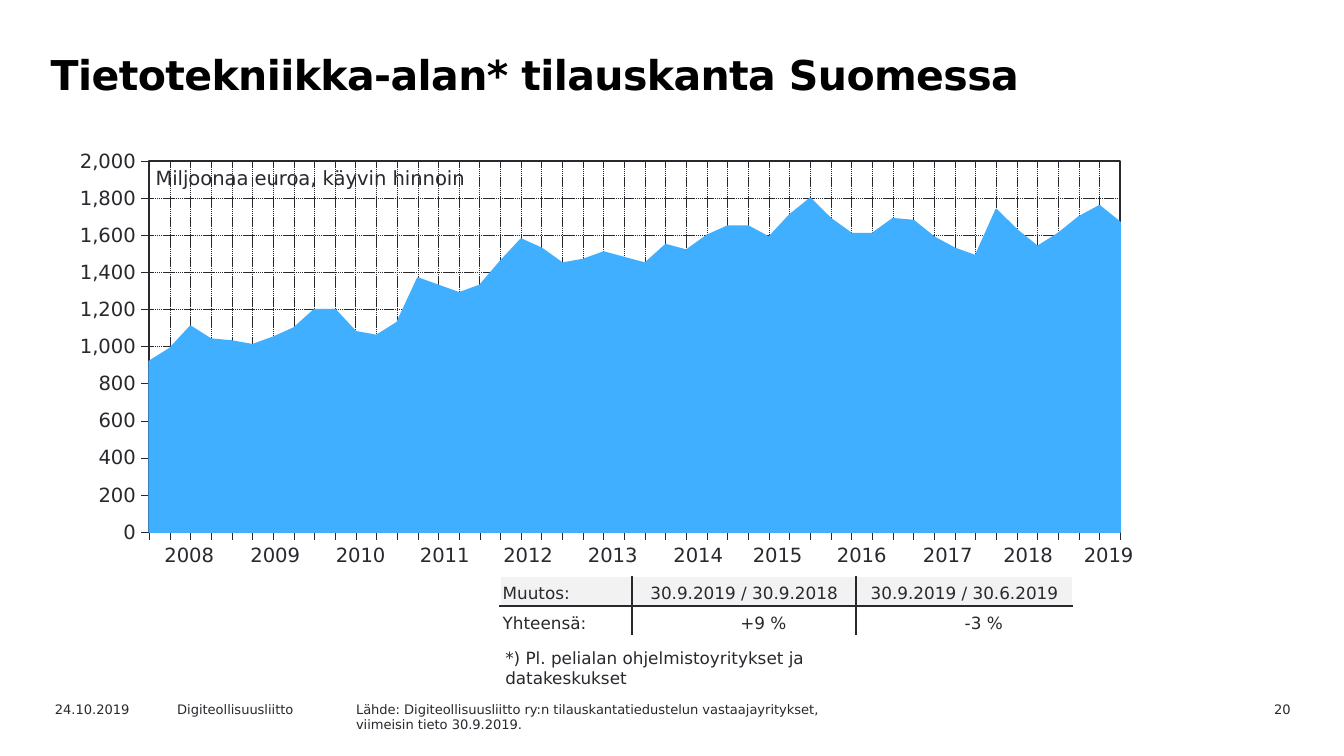
import pptx
import pptx.chart.data
import pptx.dml.color
import pptx.enum.chart
import pptx.enum.dml
import pptx.enum.text
import pptx.oxml
import pptx.oxml.ns
import pptx.util
from pptx.util import Cm, Pt

INK = pptx.dml.color.RGBColor(0x29, 0x28, 0x2E)
BLACK = pptx.dml.color.RGBColor(0, 0, 0)
WHITE = pptx.dml.color.RGBColor(255, 255, 255)
HEADER_GREY = pptx.dml.color.RGBColor(0xF2, 0xF2, 0xF2)
AREA_BLUE = pptx.dml.color.RGBColor(0x40, 0xAF, 0xFF)
FONT = "DejaVu Sans"
ALIGN = pptx.enum.text.PP_ALIGN
NO_STYLE = "{2D5ABB26-0587-4C30-8999-92F81FD0307C}"

TITLE = "Tietotekniikka-alan* tilauskanta Suomessa"
UNIT = "Miljoonaa euroa, käyvin hinnoin"
NOTE = "*) Pl. pelialan ohjelmistoyritykset ja datakeskukset"
SOURCE = [
    "Lähde: Digiteollisuusliitto ry:n tilauskantatiedustelun vastaajayritykset,",
    "viimeisin tieto 30.9.2019.",
]
FOOTER = [
    ("20", 22.25, 2.39, ALIGN.RIGHT),
    ("24.10.2019", 0.79, 2.54, ALIGN.LEFT),
    ("Digiteollisuusliitto", 3.1, 3.61, ALIGN.LEFT),
]
ORDER_BOOK = [
    920, 990, 1110, 1040, 1030, 1010, 1050, 1100, 1200, 1200, 1080, 1060,
    1130, 1370, 1330, 1290, 1330, 1460, 1580, 1530, 1450, 1470, 1510, 1480,
    1450, 1550, 1520, 1600, 1650, 1650, 1590, 1710, 1800, 1690, 1610, 1610,
    1690, 1680, 1590, 1530, 1490, 1740, 1630, 1540, 1610, 1700, 1760, 1670,
]
PLOT = {"x": 0.075, "y": 0.029, "w": 0.787, "h": 0.885}
YEARS = [str(year) for year in range(2008, 2020)]
YEAR_WIDTHS = [1.57, 1.68, 1.55, 1.63, 1.52, 1.68, 1.55, 1.45, 1.73, 1.52, 1.52, 1.52]
CHANGES = [
    ["Muutos:", "30.9.2019 / 30.9.2018", "30.9.2019 / 30.6.2019"],
    ["Yhteensä:", "+9 %", "-3 %"],
]
CHANGE_WIDTHS = [2.49, 4.24, 4.09]


def write(frame, text, size=9, color=INK, bold=False, align=ALIGN.LEFT,
          spacing=None, tracking=None):
    lines = [text] if isinstance(text, str) else text
    for index, line in enumerate(lines):
        paragraph = frame.add_paragraph() if index else frame.paragraphs[0]
        paragraph.alignment = align
        if spacing:
            paragraph.line_spacing = Pt(spacing)
        run = paragraph.add_run()
        run.text = line
        run.font.name = FONT
        run.font.size = Pt(size)
        run.font.bold = bold
        run.font.color.rgb = color
        if tracking:
            run.font._element.set("spc", str(tracking))


def add_text(slide, text, left, top, width, height, wrap=True, **style):
    box = slide.shapes.add_textbox(Cm(left), Cm(top), Cm(width), Cm(height))
    box.text_frame.word_wrap = wrap
    write(box.text_frame, text, **style)


def add_grid(slide, rows, left, top, widths, row_height):
    table = slide.shapes.add_table(
        len(rows), len(widths), Cm(left), Cm(top),
        Cm(sum(widths)), Cm(row_height * len(rows))).table
    table.first_row = table.horz_banding = False
    table._tbl.tblPr.find(pptx.oxml.ns.qn("a:tableStyleId")).text = NO_STYLE
    for column, width in zip(table.columns, widths):
        column.width = Cm(width)
    for row in table.rows:
        row.height = Cm(row_height)
    return table


def set_borders(cell, **sides):
    for position, side in enumerate("LRTB"):
        border = pptx.oxml.parse_xml(
            f'<a:ln{side} {pptx.oxml.ns.nsdecls("a")} w="12700"><a:solidFill>'
            f'<a:srgbClr val="{sides[side]}"/></a:solidFill></a:ln{side}>')
        cell._tc.get_or_add_tcPr().insert(position, border)


def set_line(line, width, dash=None):
    line.color.rgb = INK
    line.width = Pt(width)
    if dash:
        line.dash_style = dash


def add_order_chart(slide):
    data = pptx.chart.data.CategoryChartData(number_format="#,##0")
    data.categories = [str(n) for n in range(1, len(ORDER_BOOK) + 1)]
    data.add_series("Series 1", ORDER_BOOK)
    chart = slide.shapes.add_chart(
        pptx.enum.chart.XL_CHART_TYPE.AREA_STACKED,
        Cm(1.07), Cm(2.82), Cm(23.32), Cm(7.92), data).chart
    chart.has_legend = chart.has_title = False
    chart.font.name = FONT
    chart.font.size = Pt(10.5)
    chart.font.color.rgb = INK
    chart.plots[0].vary_by_categories = False

    area = chart.plots[0].series[0].format
    area.fill.solid()
    area.fill.fore_color.rgb = AREA_BLUE
    area.line.color.rgb = AREA_BLUE
    area.line.width = Pt(0.88)

    for axis in (chart.category_axis, chart.value_axis):
        axis.has_major_gridlines = True
        axis.major_tick_mark = pptx.enum.chart.XL_TICK_MARK.OUTSIDE
        axis.minor_tick_mark = pptx.enum.chart.XL_TICK_MARK.NONE
        set_line(axis.format.line, 0.22)
        set_line(axis.major_gridlines.format.line, 0.25,
                 pptx.enum.dml.MSO_LINE.SQUARE_DOT)
    chart.category_axis.tick_label_position = pptx.enum.chart.XL_TICK_LABEL_POSITION.NONE
    value_axis = chart.value_axis
    value_axis.minimum_scale, value_axis.maximum_scale = 0, 2000
    value_axis.major_unit = 200
    value_axis.tick_labels.number_format = "#,##0"
    value_axis.tick_labels.number_format_is_linked = False

    qn, nsdecls = pptx.oxml.ns.qn, pptx.oxml.ns.nsdecls
    value_axis._element.find(qn("c:crossBetween")).set("val", "midCat")
    plot_area = chart._chartSpace.chart.plotArea
    for layout in plot_area.findall(qn("c:layout")):
        plot_area.remove(layout)
    modes = "".join(f'<c:{side}Mode val="edge"/>' for side in "xy")
    places = "".join(f'<c:{side} val="{share}"/>' for side, share in PLOT.items())
    plot_area.insert(0, pptx.oxml.parse_xml(
        f'<c:layout {nsdecls("c")}><c:manualLayout><c:layoutTarget val="inner"/>'
        f'{modes}{places}</c:manualLayout></c:layout>'))
    plot_area.append(pptx.oxml.parse_xml(
        f'<c:spPr {nsdecls("c", "a")}><a:noFill/><a:ln w="12700"><a:solidFill>'
        f'<a:srgbClr val="{INK}"/></a:solidFill></a:ln></c:spPr>'))


def add_years(slide):
    table = add_grid(slide, [YEARS], 2.79, 10.16, YEAR_WIDTHS, 0.64)
    for cell, year in zip(table.rows[0].cells, YEARS):
        cell.fill.background()
        write(cell.text_frame, year, size=10.5, align=ALIGN.CENTER)


def add_changes(slide):
    table = add_grid(slide, CHANGES, 9.45, 10.9, CHANGE_WIDTHS, 0.56)
    last = len(CHANGE_WIDTHS) - 1
    for r, row in enumerate(CHANGES):
        for c, text in enumerate(row):
            cell = table.cell(r, c)
            is_figure = r > 0 and c > 0
            cell.margin_left = cell.margin_top = cell.margin_bottom = Cm(0.05)
            cell.margin_right = Cm(1.32 if is_figure else 0.05)
            cell.vertical_anchor = pptx.enum.text.MSO_ANCHOR.BOTTOM
            cell.fill.solid()
            cell.fill.fore_color.rgb = WHITE if r else HEADER_GREY
            set_borders(cell, L=INK if c else WHITE, R=INK if c < last else WHITE,
                        T=INK if r else WHITE, B=WHITE if r else INK)
            align = ALIGN.RIGHT if is_figure else ALIGN.CENTER if c else ALIGN.LEFT
            write(cell.text_frame, text, align=align)


def main():
    deck = pptx.Presentation()
    deck.slide_width, deck.slide_height = Cm(25.4), Cm(14.29)
    slide = deck.slides.add_slide(deck.slide_layouts[6])
    add_text(slide, TITLE, 0.71, 0.79, 22.2, 1.8, size=22, color=BLACK,
             bold=True, spacing=27, tracking=-30)
    for text, left, width, align in FOOTER:
        add_text(slide, text, left, 13.13, width, 0.46, size=7, align=align)
    add_text(slide, SOURCE, 6.48, 13.13, 12.7, 0.66, size=7)
    add_order_chart(slide)
    add_years(slide)
    add_text(slide, UNIT, 2.69, 3.02, 6.6, 0.69, wrap=False, size=10.5)
    add_changes(slide)
    add_text(slide, NOTE, 9.3, 12.12, 6.63, 1.02)
    deck.save("out.pptx")


if __name__ == "__main__":
    main()
